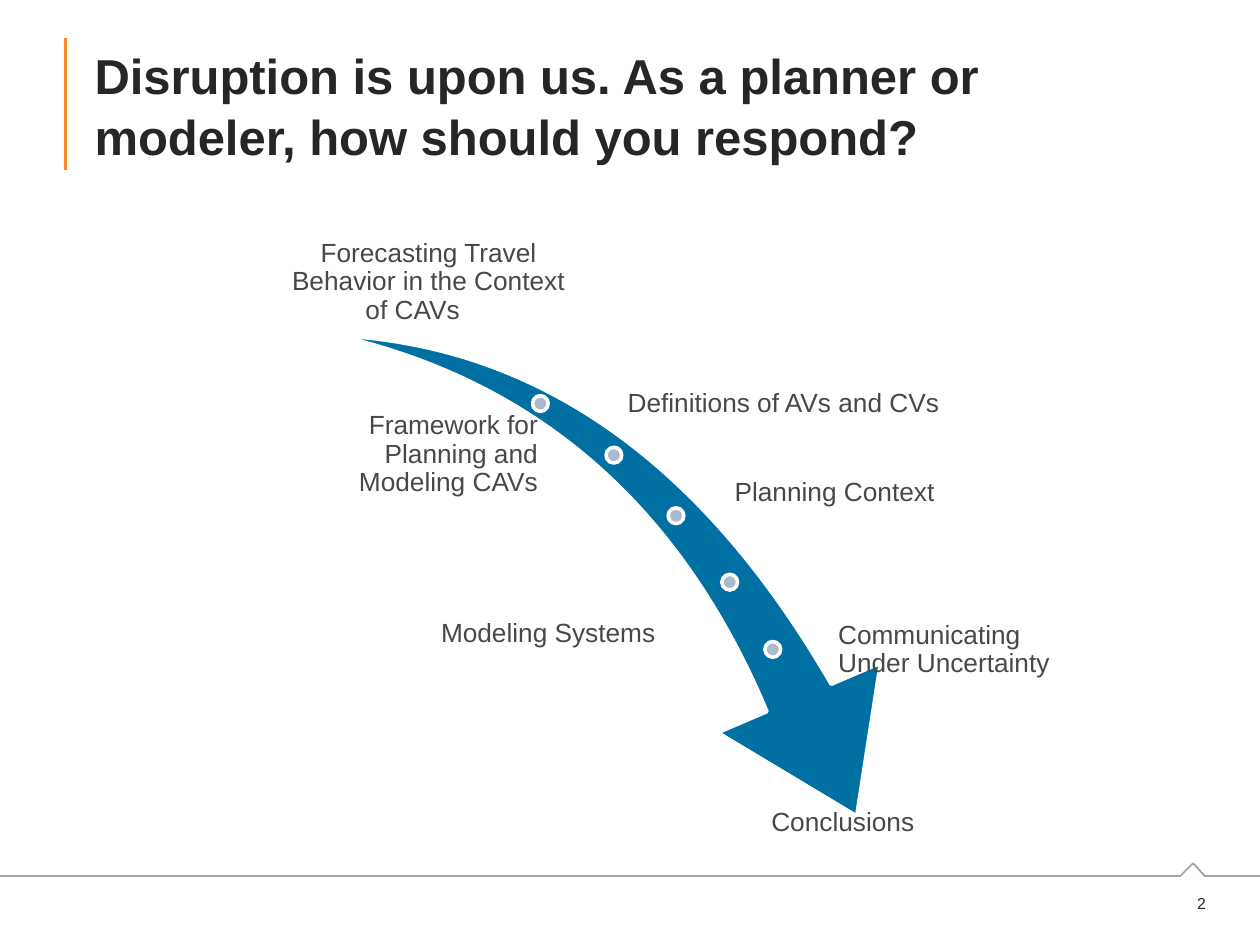
from dataclasses import dataclass
from itertools import pairwise

import pptx
import pptx.dml.color
import pptx.enum.shapes
import pptx.enum.text
import pptx.oxml.ns
import pptx.util
from lxml import etree

Pt = pptx.util.Pt
SHAPE = pptx.enum.shapes.MSO_SHAPE
ALIGN = pptx.enum.text.PP_ALIGN
ANCHOR = pptx.enum.text.MSO_ANCHOR

COLORS = {
    "accent": "F68B1F",
    "rule": "A3A3A5",
    "title": "262626",
    "label": "48484A",
    "arrow": "006FA1",
    "dot": "ABBBCD",
    "white": "FFFFFF",
}
FONT = "Arial"
DOT_SIZE = 9
LABEL_HEIGHT = 64.8
LABEL_INSET = 1.5


@dataclass
class Label:
    text: str
    left: float
    top: float
    width: float
    align: ALIGN = ALIGN.LEFT
    anchor: ANCHOR = ANCHOR.MIDDLE


LABELS = [
    Label("Forecasting Travel Behavior in the Context of CAVs\t", 162.7, 122.4, 164.2,
          ALIGN.CENTER, ANCHOR.BOTTOM),
    Label("Definitions of AVs and CVs", 357.1, 198.7, 248.4),
    Label("Framework for Planning and Modeling CAVs", 162.7, 227.5, 146.2, ALIGN.RIGHT),
    Label("Planning Context", 418.3, 249.1, 172.8),
    Label("Modeling Systems\t", 218.2, 329.8, 179.3, ALIGN.RIGHT),
    Label("Communicating Under Uncertainty", 477.4, 339.1, 128.2),
    Label("Conclusions\t", 383.8, 460.8, 221.8, ALIGN.CENTER, ANCHOR.TOP),
]
DOTS = [(304.3, 226.1), (346.3, 255.6), (381.8, 290.2), (412.5, 328.2), (437.1, 366.6)]
FOOTER_RULE = [(0, 500.4), (674.6, 500.4), (681.8, 493.2), (688.3, 500.4), (720, 500.4)]


def rgb(name: str) -> pptx.dml.color.RGBColor:
    return pptx.dml.color.RGBColor.from_string(COLORS[name])


def set_text(frame, text: str, size: float, color: str, align=ALIGN.LEFT,
             anchor=ANCHOR.MIDDLE, bold: bool = False):
    frame.text = text
    frame.word_wrap = True
    frame.auto_size = pptx.enum.text.MSO_AUTO_SIZE.NONE
    frame.vertical_anchor = anchor
    paragraph = frame.paragraphs[0]
    paragraph.alignment = align
    for run in paragraph.runs:
        run.font.name = FONT
        run.font.size = Pt(size)
        run.font.bold = bold
        run.font.color.rgb = rgb(color)
    return paragraph


def add_line(slide, start: tuple, end: tuple, color: str, width: float) -> None:
    line = slide.shapes.add_connector(
        pptx.enum.shapes.MSO_CONNECTOR.STRAIGHT, *map(Pt, start + end))
    line.line.color.rgb = rgb(color)
    line.line.width = Pt(width)
    properties = line._element.spPr
    etree.SubElement(properties, pptx.oxml.ns.qn("a:effectLst"))


def add_outlined(slide, kind: SHAPE, box: tuple, color: str):
    shape = slide.shapes.add_shape(kind, *map(Pt, box))
    shape.shadow.inherit = False
    shape.fill.solid()
    shape.fill.fore_color.rgb = rgb(color)
    shape.line.color.rgb = rgb("white")
    shape.line.width = Pt(2)
    return shape


def add_label(slide, label: Label) -> None:
    box = slide.shapes.add_textbox(
        Pt(label.left), Pt(label.top), Pt(label.width), Pt(LABEL_HEIGHT))
    frame = box.text_frame
    frame.margin_left = frame.margin_right = Pt(LABEL_INSET)
    frame.margin_top = frame.margin_bottom = Pt(LABEL_INSET)
    paragraph = set_text(frame, label.text, 15, "label", label.align, label.anchor)
    paragraph.line_spacing = 0.9
    paragraph.space_after = Pt(5.25)


def main() -> None:
    deck = pptx.Presentation()
    deck.slide_width, deck.slide_height = Pt(720), Pt(540)
    slide = deck.slides.add_slide(deck.slide_layouts[5])

    title = slide.shapes.title
    title.left, title.top, title.width, title.height = map(Pt, (46.8, 21.6, 637.2, 75.6))
    heading = set_text(
        title.text_frame,
        "Disruption is upon us. As a planner or modeler, how should you respond?",
        28, "title", bold=True)
    heading.line_spacing = 1.05

    add_line(slide, (37.4, 21.6), (37.4, 97.2), "accent", 1.5)
    for start, end in pairwise(FOOTER_RULE):
        add_line(slide, start, end, "rule", 1)

    page_number = slide.shapes.add_textbox(Pt(666), Pt(506.9), Pt(30.2), Pt(18))
    set_text(page_number.text_frame, "2", 9, "title", ALIGN.RIGHT)

    arrow = add_outlined(slide, SHAPE.SWOOSH_ARROW, (185.8, 202.3, 347.8, 242.6), "arrow")
    arrow.adjustments[0] = 0.163
    arrow.adjustments[1] = 0.314
    arrow.rotation = 73.3

    for left, top in DOTS:
        add_outlined(slide, SHAPE.OVAL, (left, top, DOT_SIZE, DOT_SIZE), "dot")
    for label in LABELS:
        add_label(slide, label)

    deck.save("out.pptx")


if __name__ == "__main__":
    main()
